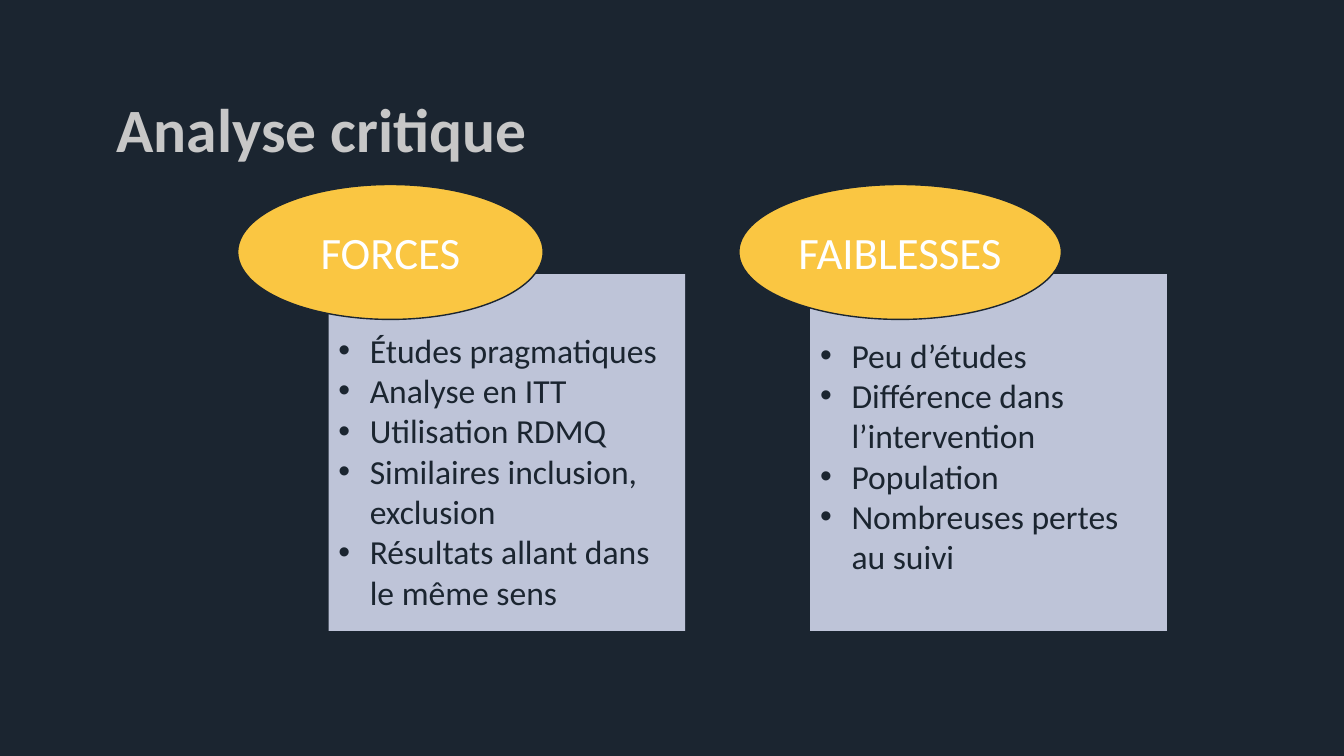
from lxml.etree import SubElement
from pptx import Presentation
from pptx.dml.color import RGBColor
from pptx.enum.shapes import MSO_SHAPE
from pptx.enum.text import MSO_ANCHOR, PP_ALIGN
from pptx.oxml.ns import qn
from pptx.util import Cm, Pt

# Content
TITLE = "Analyse critique"
PANELS = [
    {
        "heading": "FORCES",
        "points": [
            "Études pragmatiques",
            "Analyse en ITT",
            "Utilisation RDMQ",
            "Similaires inclusion, exclusion",
            "Résultats allant dans le même sens",
        ],
        "card_left": 8.28, "text_top": 1.4,
        "oval_left": 5.99, "oval_width": 7.7,
    },
    {
        "heading": "FAIBLESSES",
        "points": [
            "Peu d’études",
            "Différence dans l’intervention",
            "Population",
            "Nombreuses pertes au suivi",
        ],
        "card_left": 20.42, "text_top": 1.52,
        "oval_left": 18.62, "oval_width": 8.13,
    },
]

# Format values, lengths in cm
COLORS = {"night": "1B2530", "card": "BEC4D8", "oval": "FAC642",
          "white": "FFFFFF", "title": "C7C7C7"}
CARD_TOP, CARD_SIZE = 6.91, 8.99
OVAL_TOP, OVAL_HEIGHT = 4.65, 3.4
BULLET_INDENT = Cm(0.79)
TITLE_FONT = {"name": "Calibri", "size": Pt(44), "bold": True}
HEADING_FONT = {"name": "Calibri", "size": Pt(32)}
POINT_FONT = {"name": "Calibri", "size": Pt(24)}


def color(name):
    return RGBColor.from_string(COLORS[name])


def add_panel_shape(slide, kind, box, fill):
    shape = slide.shapes.add_shape(kind, *map(Cm, box))
    shape.shadow.inherit = False
    shape.fill.solid()
    shape.fill.fore_color.rgb = color(fill)
    return shape


def write(paragraph, text, font_values, font_color, alignment=PP_ALIGN.LEFT):
    run = paragraph.add_run()
    run.text = text
    for key, value in font_values.items():
        setattr(run.font, key, value)
    run.font.color.rgb = color(font_color)
    paragraph.alignment = alignment


def add_bullet(paragraph):
    properties = paragraph._p.get_or_add_pPr()
    properties.set("marL", str(BULLET_INDENT))
    properties.set("indent", str(-BULLET_INDENT))
    SubElement(properties, qn("a:buFont"), typeface="Arial")
    SubElement(properties, qn("a:buChar"), char="•")


def add_card(slide, panel):
    box = (panel["card_left"], CARD_TOP, CARD_SIZE, CARD_SIZE)
    card = add_panel_shape(slide, MSO_SHAPE.RECTANGLE, box, "card")
    card.line.fill.background()
    frame = card.text_frame
    frame.word_wrap = True
    frame.vertical_anchor = MSO_ANCHOR.TOP
    frame.margin_top = Cm(panel["text_top"])
    for index, point in enumerate(panel["points"]):
        paragraph = frame.add_paragraph() if index else frame.paragraphs[0]
        write(paragraph, point, POINT_FONT, "night")
        add_bullet(paragraph)


def add_heading(slide, panel):
    box = (panel["oval_left"], OVAL_TOP, panel["oval_width"], OVAL_HEIGHT)
    oval = add_panel_shape(slide, MSO_SHAPE.OVAL, box, "oval")
    oval.line.color.rgb = color("night")
    oval.line.width = Pt(1)
    oval.text_frame.vertical_anchor = MSO_ANCHOR.MIDDLE
    write(oval.text_frame.paragraphs[0], panel["heading"], HEADING_FONT,
          "white", PP_ALIGN.CENTER)


def add_title(slide):
    frame = slide.shapes.add_textbox(*map(Cm, (2.69, 1.5, 29.21, 3.68))).text_frame
    frame.word_wrap = True
    frame.vertical_anchor = MSO_ANCHOR.MIDDLE
    paragraph = frame.paragraphs[0]
    paragraph.line_spacing = 0.9
    write(paragraph, TITLE, TITLE_FONT, "title")


def main():
    presentation = Presentation()
    presentation.slide_width = Cm(33.87)
    presentation.slide_height = Cm(19.05)
    slide = presentation.slides.add_slide(presentation.slide_layouts[6])
    slide.background.fill.solid()
    slide.background.fill.fore_color.rgb = color("night")

    # Each panel: a card with its heading oval on top
    for panel in PANELS:
        add_card(slide, panel)
        add_heading(slide, panel)
    add_title(slide)
    presentation.save("out.pptx")


if __name__ == "__main__":
    main()
